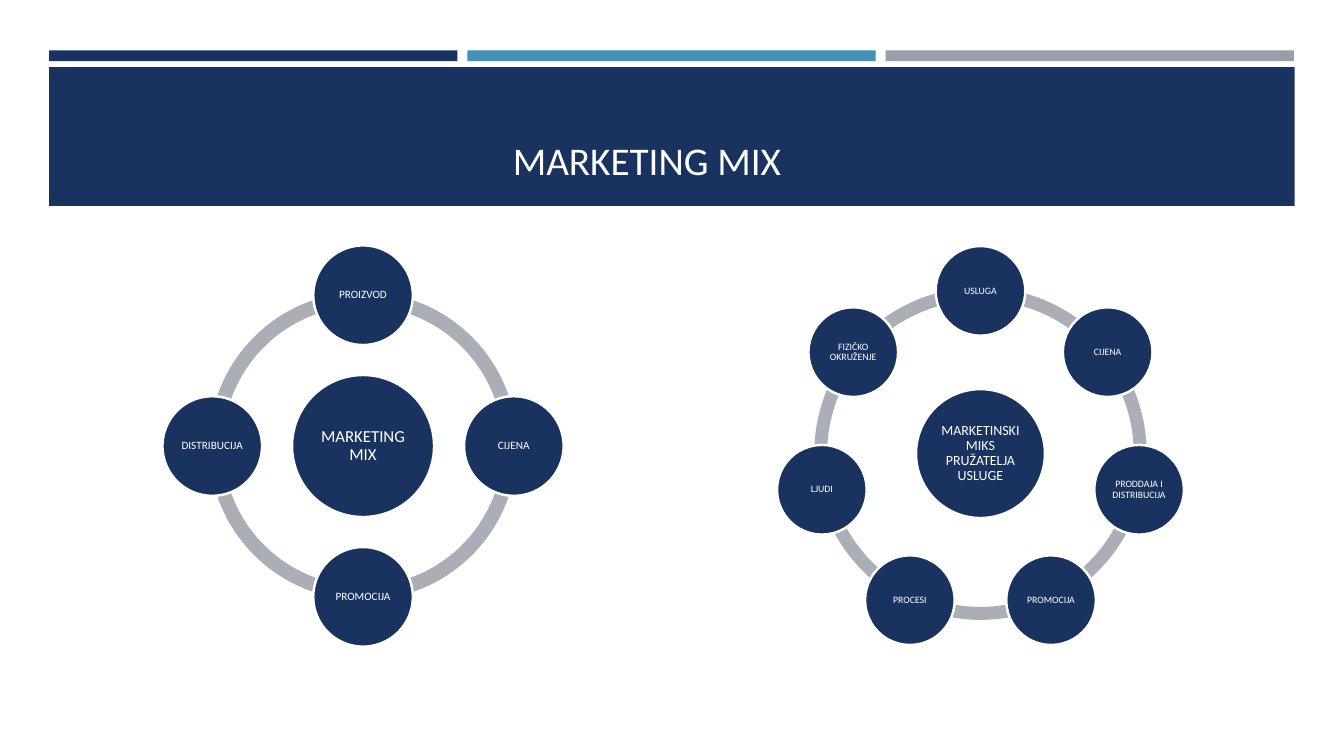
from dataclasses import dataclass
from math import cos, radians, sin

from pptx import Presentation
from pptx.dml.color import RGBColor
from pptx.enum.shapes import MSO_SHAPE
from pptx.enum.text import MSO_ANCHOR, MSO_AUTO_SIZE, PP_ALIGN
from pptx.util import Cm, Pt


@dataclass(frozen=True)
class Theme:
    font: str = "Calibri"
    navy: str = "1A3260"
    blue: str = "4590B8"
    gray: str = "969FA7"
    ring: str = "ACAEB7"
    white: str = "FFFFFF"
    title_size: float = 28
    outline: float = 1.75


@dataclass(frozen=True)
class Cycle:
    center: tuple
    orbit: float
    ring: float
    thickness: float
    core: float
    node: float
    core_size: float
    node_size: float
    core_label: str
    labels: tuple


class SlideBuilder:
    def __init__(self, slide, theme):
        self.slide = slide
        self.theme = theme

    def shape(self, kind, left, top, width, height, color):
        shape = self.slide.shapes.add_shape(kind, Cm(left), Cm(top), Cm(width), Cm(height))
        shape.shadow.inherit = False
        shape.fill.solid()
        shape.fill.fore_color.rgb = RGBColor.from_string(color)
        shape.line.fill.background()
        return shape

    def text(self, shape, text, size, alignment, anchor):
        frame = shape.text_frame
        frame.text = text
        frame.word_wrap = True
        frame.auto_size = MSO_AUTO_SIZE.NONE
        frame.vertical_anchor = anchor
        paragraph = frame.paragraphs[0]
        paragraph.alignment = alignment
        paragraph.line_spacing = 0.9
        font = paragraph.runs[0].font
        font.name = self.theme.font
        font.size = Pt(size)
        font.color.rgb = RGBColor.from_string(self.theme.white)

    def title(self, text, left, top, width, height):
        title = self.slide.shapes.title
        title.left, title.top, title.width, title.height = map(Cm, (left, top, width, height))
        self.text(title, text, self.theme.title_size, PP_ALIGN.LEFT, MSO_ANCHOR.BOTTOM)
        title.element.getparent().append(title.element)

    def circle(self, center, diameter, label, size):
        left, top = (value - diameter / 2 for value in center)
        circle = self.shape(MSO_SHAPE.OVAL, left, top, diameter, diameter, self.theme.navy)
        circle.line.color.rgb = RGBColor.from_string(self.theme.white)
        circle.line.width = Pt(self.theme.outline)
        frame = circle.text_frame
        frame.margin_left = frame.margin_right = Cm(0.03)
        frame.margin_top = frame.margin_bottom = Cm(0.03)
        self.text(circle, label, size, PP_ALIGN.CENTER, MSO_ANCHOR.MIDDLE)

    def arc(self, center, diameter, start, end, thickness):
        left, top = (value - diameter / 2 for value in center)
        arc = self.shape(MSO_SHAPE.BLOCK_ARC, left, top, diameter, diameter, self.theme.ring)
        for index, value in enumerate((start % 360 * 0.6, end % 360 * 0.6, thickness)):
            arc.adjustments[index] = value

    def cycle(self, cycle):
        step = 360 / len(cycle.labels)
        angles = [270 + step * index for index in range(len(cycle.labels))]
        for angle in angles:
            self.arc(cycle.center, cycle.ring, angle, angle + step, cycle.thickness)
        self.circle(cycle.center, cycle.core, cycle.core_label, cycle.core_size)
        x, y = cycle.center
        for angle, label in zip(angles, cycle.labels):
            turn = radians(angle)
            center = (x + cycle.orbit * cos(turn), y + cycle.orbit * sin(turn))
            self.circle(center, cycle.node, label, cycle.node_size)


MARKETING_MIX = Cycle(
    center=(9.15, 11.24), orbit=3.8, ring=7.77, thickness=0.046,
    core=3.58, node=2.51, core_size=12, node_size=8,
    core_label="MARKETING MIX",
    labels=("PROIZVOD", "CIJENA", "PROMOCIJA", "DISTRIBUCIJA"),
)
SERVICE_MIX = Cycle(
    center=(24.71, 11.43), orbit=4.1, ring=8.38, thickness=0.039,
    core=3.25, node=2.26, core_size=10, node_size=7,
    core_label="MARKETINSKI MIKS PRUŽATELJA USLUGE",
    labels=("USLUGA", "CIJENA", "PRODDAJA I DISTRIBUCIJA", "PROMOCIJA",
            "PROCESI", "LJUDI", "FIZIČKO OKRUŽENJE"),
)


def main():
    presentation = Presentation()
    presentation.slide_width = Cm(33.87)
    presentation.slide_height = Cm(19.05)
    theme = Theme()
    builder = SlideBuilder(presentation.slides.add_slide(presentation.slide_layouts[5]), theme)
    for index, color in enumerate((theme.navy, theme.blue, theme.gray)):
        builder.shape(MSO_SHAPE.RECTANGLE, 1.24 + 10.54 * index, 1.27, 10.29, 0.27, color)
    builder.shape(MSO_SHAPE.RECTANGLE, 1.24, 1.69, 31.39, 3.5, theme.navy)
    builder.title("MARKETING MIX", 12.67, 2.03, 19.84, 2.74)
    for cycle in (MARKETING_MIX, SERVICE_MIX):
        builder.cycle(cycle)
    presentation.save("out.pptx")


if __name__ == "__main__":
    main()
